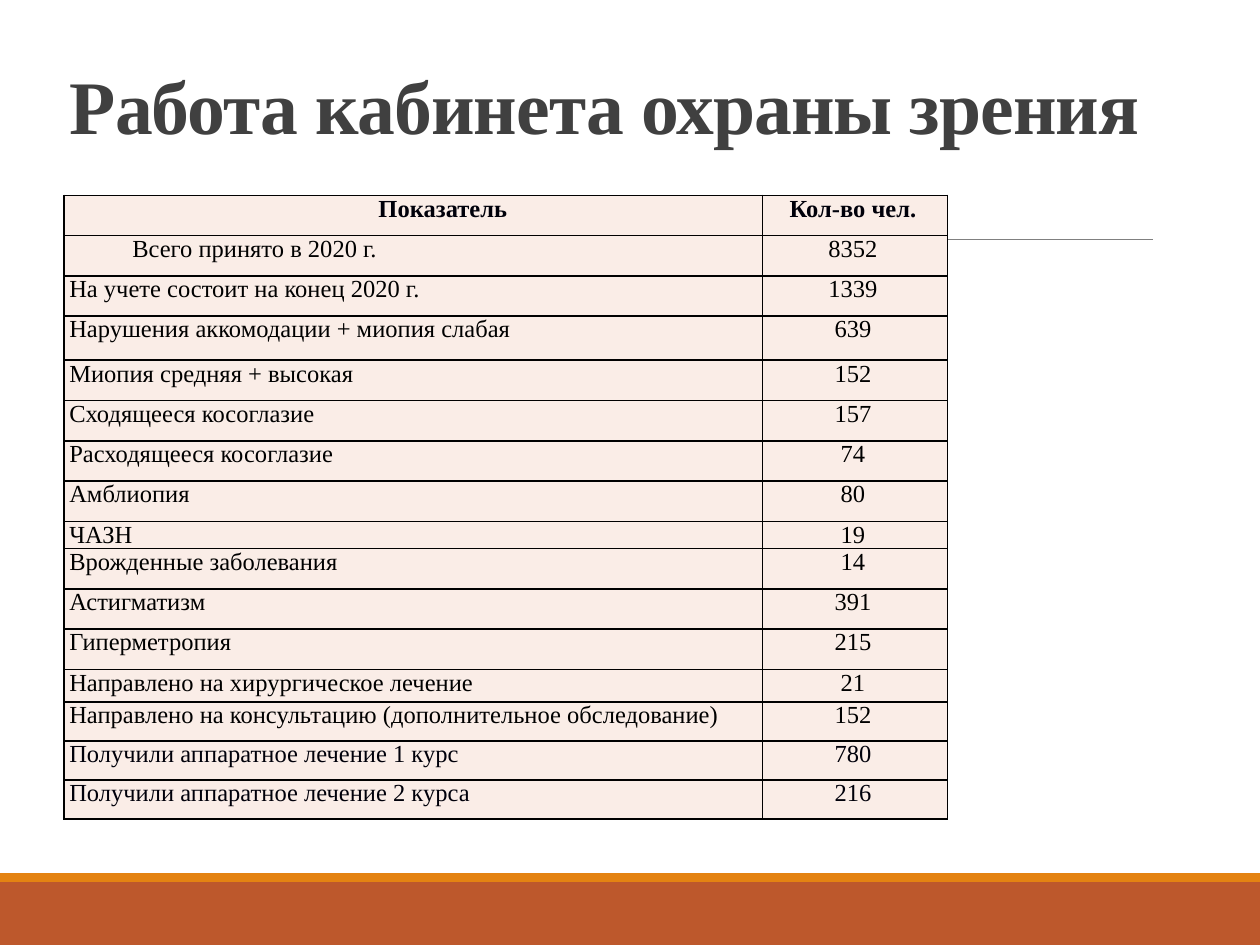
from dataclasses import dataclass

import pptx
import pptx.dml.color
import pptx.enum.shapes
import pptx.enum.text
import pptx.oxml
import pptx.oxml.ns
import pptx.util

Inches = pptx.util.Inches
Pt = pptx.util.Pt
ALIGN = pptx.enum.text.PP_ALIGN


@dataclass(frozen=True)
class Theme:
    font: str = "Times New Roman"
    title_size: float = 43.2
    table_size: float = 14
    title: str = "404040"
    text: str = "000000"
    dark_text: str = "00000A"
    cell: str = "FAEDE7"
    border: str = "000000"
    rule: str = "808080"
    footer: str = "BD582C"
    stripe: str = "E48312"


THEME = Theme()
WIDTH, HEIGHT = 10, 7.5
ROW = 0.32
COLUMNS = (5.54, 1.47)
HEADER = ("Показатель", "Кол-во чел.")
INDICATORS = (
    ("Всего принято в 2020 г.", "8352", ROW),
    ("На учете состоит на конец 2020 г.", "1339", ROW),
    ("Нарушения аккомодации + миопия слабая", "639", 0.35),
    ("Миопия средняя + высокая", "152", ROW),
    ("Сходящееся косоглазие", "157", ROW),
    ("Расходящееся косоглазие", "74", ROW),
    ("Амблиопия", "80", ROW),
    ("ЧАЗН", "19", 0.19),
    ("Врожденные заболевания", "14", ROW),
    ("Астигматизм", "391", ROW),
    ("Гиперметропия", "215", ROW),
    ("Направлено на хирургическое лечение", "21", 0.26),
    ("Направлено на консультацию (дополнительное обследование)", "152", 0.31),
    ("Получили аппаратное лечение 1 курс", "780", 0.31),
    ("Получили аппаратное лечение 2 курса", "216", 0.31),
)
INDENTED_ROWS = 2
DARK_ROWS = (0, len(INDICATORS) - 1, len(INDICATORS))


def rgb(value):
    return pptx.dml.color.RGBColor.from_string(value)


def style_font(font, size, color, bold):
    font.name = THEME.font
    font.size = Pt(size)
    font.bold = bold
    font.color.rgb = rgb(color)


def add_band(s, top, height, color):
    band = s.shapes.add_shape(
        pptx.enum.shapes.MSO_SHAPE.RECTANGLE,
        0, Inches(top), Inches(WIDTH), Inches(height),
    )
    band.shadow.inherit = False
    band.fill.solid()
    band.fill.fore_color.rgb = rgb(color)
    band.line.fill.background()


def add_rule(s, left, right, y):
    rule = s.shapes.add_connector(
        pptx.enum.shapes.MSO_CONNECTOR.STRAIGHT,
        Inches(left), Inches(y), Inches(right), Inches(y),
    )
    rule.line.color.rgb = rgb(THEME.rule)
    rule.line.width = Pt(0.5)
    pptx.oxml.ns.qn("a:effectLst")
    rule._element.spPr.append(
        pptx.oxml.parse_xml(f'<a:effectLst {pptx.oxml.ns.nsdecls("a")}/>')
    )


def set_title(s, text):
    title = s.shapes.title
    title.left, title.top = Inches(0.35), Inches(0.44)
    title.width, title.height = Inches(8.9), Inches(0.8)
    tf = title.text_frame
    tf.text = text
    tf.auto_size = pptx.enum.text.MSO_AUTO_SIZE.NONE
    tf.vertical_anchor = pptx.enum.text.MSO_ANCHOR.BOTTOM
    p = tf.paragraphs[0]
    p.alignment = ALIGN.CENTER
    p.line_spacing = 0.85
    style_font(p.font, THEME.title_size, THEME.title, True)
    p.runs[0].font._element.set("spc", "-50")


def set_borders(cell):
    tc_pr = cell._tc.get_or_add_tcPr()
    for side in "LRTB":
        tc_pr.append(pptx.oxml.parse_xml(
            f'<a:ln{side} {pptx.oxml.ns.nsdecls("a")} w="{Pt(1)}">'
            f'<a:solidFill><a:srgbClr val="{THEME.border}"/></a:solidFill>'
            f'</a:ln{side}>'
        ))


def fill_cell(cell, text, align, color, bold, indented):
    set_borders(cell)
    cell.fill.solid()
    cell.fill.fore_color.rgb = rgb(THEME.cell)
    cell.margin_left, cell.margin_right = Inches(0.04), Inches(0.07)
    cell.margin_top = cell.margin_bottom = 0
    cell.text = text
    p = cell.text_frame.paragraphs[0]
    p.alignment = align
    style_font(p.font, THEME.table_size, color, bold)
    if indented:
        p.level = 1
        p._p.get_or_add_pPr().set("marL", str(Inches(0.5)))


def add_indicator_table(s, left, top):
    rows = [(*HEADER, ROW), *INDICATORS]
    heights = [row[-1] for row in rows]
    table = s.shapes.add_table(
        len(rows), len(COLUMNS), Inches(left), Inches(top),
        Inches(sum(COLUMNS)), Inches(sum(heights)),
    ).table
    for column, width in zip(table.columns, COLUMNS):
        column.width = Inches(width)
    for i, (name, count, height) in enumerate(rows):
        table.rows[i].height = Inches(height)
        header = i == 0
        color = THEME.dark_text if i in DARK_ROWS else THEME.text
        name_align = ALIGN.CENTER if header else ALIGN.LEFT
        fill_cell(table.cell(i, 0), name, name_align, color, header,
                  i < INDENTED_ROWS)
        fill_cell(table.cell(i, 1), count, ALIGN.CENTER, color, header, False)


def main():
    prs = pptx.Presentation()
    prs.slide_width, prs.slide_height = Inches(WIDTH), Inches(HEIGHT)
    s = prs.slides.add_slide(prs.slide_layouts[5])
    add_band(s, 7, 0.5, THEME.footer)
    add_band(s, 6.93, 0.07, THEME.stripe)
    add_rule(s, 0.98, 9.15, 1.9)
    set_title(s, "Работа кабинета охраны зрения")
    add_indicator_table(s, 0.51, 1.55)
    prs.save("out.pptx")


if __name__ == "__main__":
    main()
